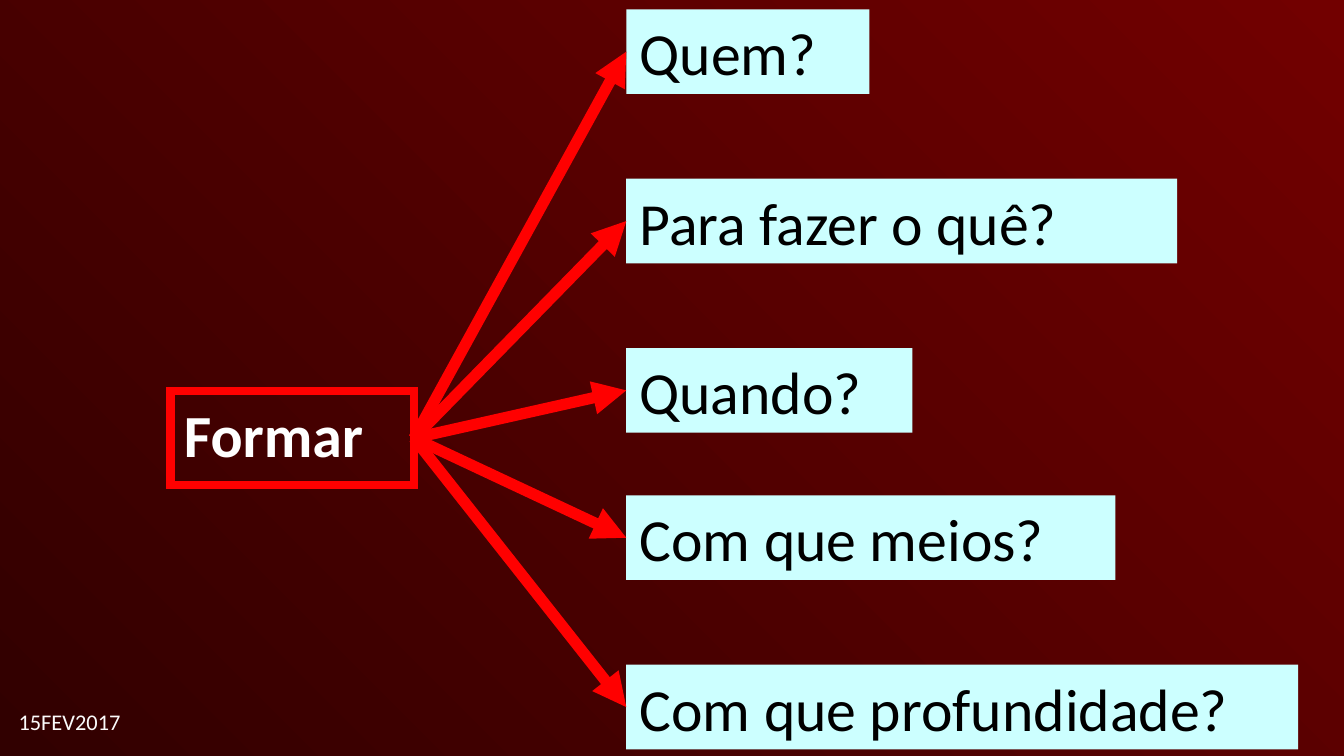
from dataclasses import dataclass

from lxml.etree import SubElement
from pptx import Presentation
from pptx.dml.color import RGBColor
from pptx.enum.shapes import MSO_CONNECTOR, MSO_SHAPE
from pptx.enum.text import MSO_ANCHOR, PP_ALIGN
from pptx.oxml.ns import qn
from pptx.shapes.autoshape import Shape
from pptx.slide import Slide
from pptx.util import Inches, Pt

# Slide (16:9) and grid, in inches
SLIDE_W = 10
SLIDE_H = SLIDE_W * 9 / 16
QUESTION_LEFT, QUESTION_H = 4.66, 0.63
FIRST_ROW_TOP, ROW_STEP = 0.07, 1.26

FONT = "Calibri"
GLOW_RED = RGBColor(0x72, 0x00, 0x00)
DARK_RED = RGBColor(0x31, 0x00, 0x00)
RED = RGBColor(0xFF, 0x00, 0x00)
PALE_CYAN = RGBColor(0xCC, 0xFF, 0xFF)
BLACK = RGBColor(0x00, 0x00, 0x00)
WHITE = RGBColor(0xFF, 0xFF, 0xFF)
OFF_WHITE = RGBColor(0xFB, 0xFB, 0xFB)

RIGHT_SIDE, LEFT_SIDE = 3, 1


@dataclass(frozen=True)
class Question:
    text: str
    row: float    # in row steps from the first question
    width: float  # in inches


QUESTIONS = [
    Question("Quem?", 0, 1.81),
    Question("Para fazer o quê?", 1, 4.1),
    Question("Quando?", 2, 2.13),
    Question("Com que meios?", 2.87, 3.64),
    Question("Com que profundidade?", 3.87, 5),
]


def paint_background(slide: Slide) -> None:
    """Circular gradient that spreads from the top right corner."""
    fill = slide.background.fill
    fill.gradient()
    for stop, color in zip(fill.gradient_stops, (GLOW_RED, DARK_RED)):
        stop.color.rgb = color
    gradient = slide.element.xpath(".//p:bgPr/a:gradFill")[0]
    gradient.remove(gradient.find(qn("a:lin")))
    circle = SubElement(gradient, qn("a:path"), {"path": "circle"})
    SubElement(circle, qn("a:fillToRect"), {"l": "100000", "b": "100000"})


def write(shape: Shape, text: str, size: float, color: RGBColor,
          bold: bool = False) -> None:
    frame = shape.text_frame
    frame.word_wrap = True
    frame.vertical_anchor = MSO_ANCHOR.TOP
    paragraph = frame.paragraphs[0]
    paragraph.alignment = PP_ALIGN.LEFT
    run = paragraph.add_run()
    run.text = text
    run.font.name = FONT
    run.font.size = Pt(size)
    run.font.bold = bold
    run.font.color.rgb = color


def add_box(slide: Slide, left: float, top: float, width: float,
            height: float) -> Shape:
    box = slide.shapes.add_shape(MSO_SHAPE.RECTANGLE, Inches(left),
                                 Inches(top), Inches(width), Inches(height))
    box.shadow.inherit = False
    return box


def add_topic(slide: Slide) -> Shape:
    topic = add_box(slide, 1.27, 2.91, 1.81, 0.7)
    topic.fill.background()
    topic.line.color.rgb = RED
    topic.line.width = Pt(4.5)
    # Square corners on the frame
    SubElement(topic.element.spPr.find(qn("a:ln")), qn("a:miter"),
               {"lim": "800000"})
    write(topic, "Formar", 32, WHITE, bold=True)
    return topic


def add_question(slide: Slide, question: Question) -> Shape:
    top = FIRST_ROW_TOP + question.row * ROW_STEP
    box = add_box(slide, QUESTION_LEFT, top, question.width, QUESTION_H)
    box.fill.solid()
    box.fill.fore_color.rgb = PALE_CYAN
    box.line.fill.background()
    write(box, question.text, 32, BLACK)
    return box


def add_arrow(slide: Slide, start: Shape, end: Shape) -> None:
    arrow = slide.shapes.add_connector(MSO_CONNECTOR.STRAIGHT, 0, 0, 0, 0)
    arrow.begin_connect(start, RIGHT_SIDE)
    arrow.end_connect(end, LEFT_SIDE)
    arrow.line.color.rgb = RED
    arrow.line.width = Pt(6)
    properties = arrow.element.spPr
    SubElement(properties.find(qn("a:ln")), qn("a:tailEnd"),
               {"type": "triangle"})
    SubElement(properties, qn("a:effectLst"))


def main() -> None:
    presentation = Presentation()
    presentation.slide_width = Inches(SLIDE_W)
    presentation.slide_height = Inches(SLIDE_H)
    blank_layout = presentation.slide_layouts[6]
    slide = presentation.slides.add_slide(blank_layout)
    paint_background(slide)

    # Date in the bottom left corner
    date = slide.shapes.add_textbox(Inches(0.04), Inches(5.22),
                                    Inches(1.24), Inches(0.31))
    write(date, "15FEV2017", 12, OFF_WHITE)

    # Topic, its questions, and the arrows that join them
    topic = add_topic(slide)
    question_boxes = [add_question(slide, question) for question in QUESTIONS]
    for box in question_boxes:
        add_arrow(slide, topic, box)

    presentation.save("out.pptx")


if __name__ == "__main__":
    main()
